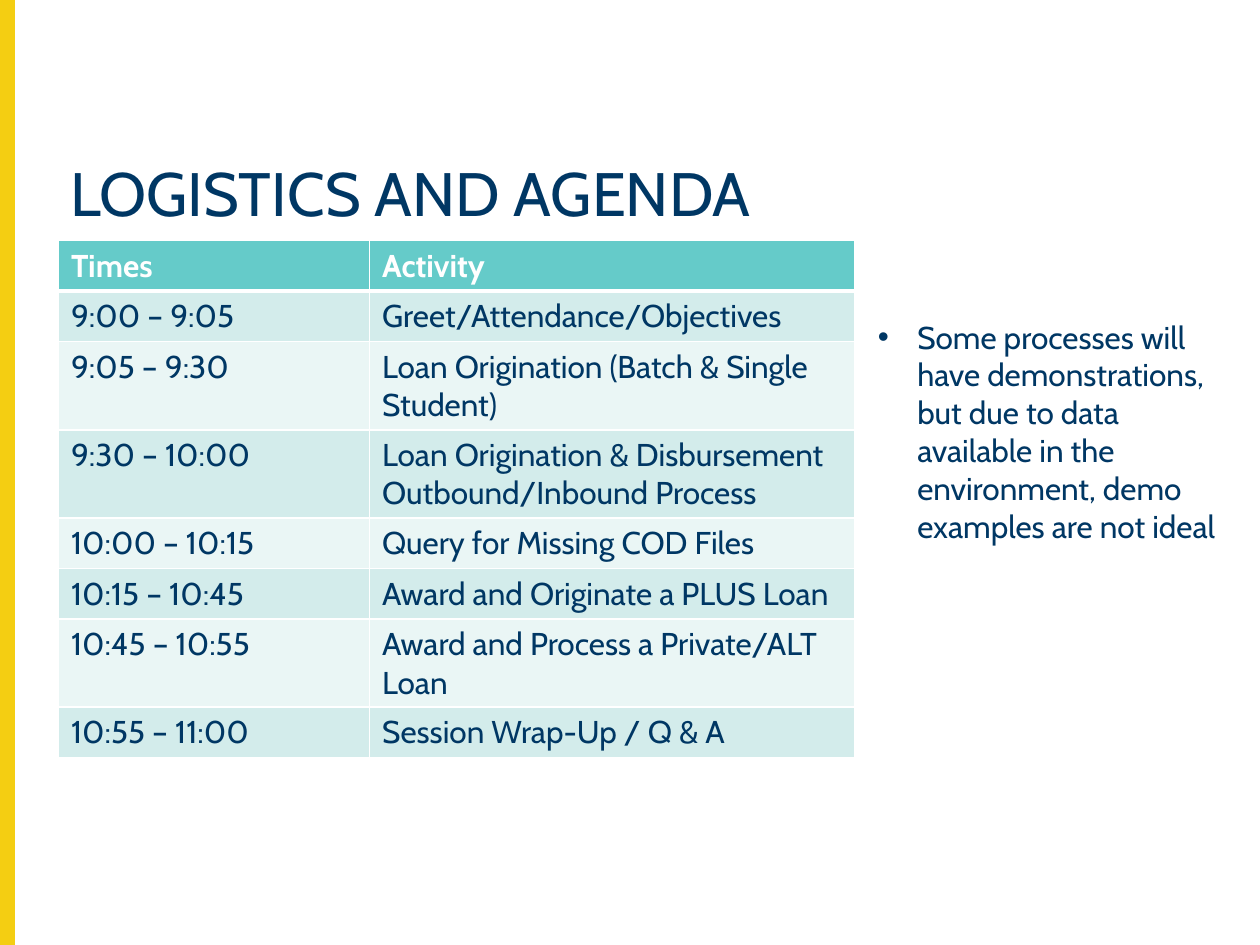
from lxml import etree
from pptx import Presentation
from pptx.dml.color import RGBColor
from pptx.enum.shapes import MSO_SHAPE
from pptx.enum.text import MSO_ANCHOR
from pptx.oxml.ns import qn
from pptx.util import Pt

RECTANGLE = MSO_SHAPE.RECTANGLE
TOP = MSO_ANCHOR.TOP

NAVY = RGBColor(0x00, 0x37, 0x64)
YELLOW = RGBColor(0xF4, 0xCE, 0x12)
TEAL = RGBColor(0x65, 0xCB, 0xC9)
BAND_DARK = RGBColor(0xD3, 0xEC, 0xEB)
BAND_LIGHT = RGBColor(0xEA, 0xF6, 0xF5)
WHITE = RGBColor(0xFF, 0xFF, 0xFF)

FONT = "Cabin"
BODY_SIZE = 18
ROW_HEIGHT = 26.64
COLUMN_WIDTHS = (177.84, 277.2)

AGENDA = [
    ("Times", "Activity"),
    ("9:00 – 9:05", "Greet/Attendance/Objectives"),
    ("9:05 – 9:30", "Loan Origination (Batch & Single Student)"),
    ("9:30 – 10:00", "Loan Origination & Disbursement Outbound/Inbound Process"),
    ("10:00 – 10:15", "Query for Missing COD Files"),
    ("10:15 – 10:45", "Award and Originate a PLUS Loan"),
    ("10:45 – 10:55", "Award and Process a Private/ALT Loan"),
    ("10:55 – 11:00", "Session Wrap-Up / Q & A"),
]
NOTE = ("Some processes will have demonstrations, but due to data available "
        "in the environment, demo examples are not ideal")


def style_paragraph(paragraph, size, color, bold=False):
    font = paragraph.font
    font.name, font.size, font.bold = FONT, Pt(size), bold
    font.color.rgb = color


def add_side_bar(slide, width, height):
    bar = slide.shapes.add_shape(RECTANGLE, 0, 0, width, height)
    bar.shadow.inherit = False
    bar.fill.solid()
    bar.fill.fore_color.rgb = YELLOW
    bar.line.color.rgb = YELLOW
    bar.line.width = Pt(1)


def add_text(slide, text, left, top, width, height, size):
    box = slide.shapes.add_textbox(Pt(left), Pt(top), Pt(width), Pt(height))
    frame = box.text_frame
    frame.word_wrap = True
    frame.vertical_anchor = TOP
    paragraph = frame.paragraphs[0]
    paragraph.text = text
    style_paragraph(paragraph, size, NAVY)
    return paragraph


def add_bullet(paragraph, indent):
    properties = paragraph._p.get_or_add_pPr()
    properties.set("marL", str(Pt(indent)))
    properties.set("indent", str(-Pt(indent)))
    etree.SubElement(properties, qn("a:buFont"), typeface="Arial")
    etree.SubElement(properties, qn("a:buChar"), char="•")


def set_borders(cell, bottom_width):
    properties = cell._tc.get_or_add_tcPr()
    widths = {"a:lnL": 1, "a:lnR": 1, "a:lnT": 1, "a:lnB": bottom_width}
    for position, (tag, width) in enumerate(widths.items()):
        line = etree.Element(qn(tag), w=str(Pt(width)))
        fill = etree.SubElement(line, qn("a:solidFill"))
        etree.SubElement(fill, qn("a:srgbClr"), val=str(WHITE))
        properties.insert(position, line)  # borders come before the fill


def style_cell(cell, text, row_index):
    header = row_index == 0
    band = BAND_DARK if row_index % 2 else BAND_LIGHT
    cell.text = text
    style_paragraph(cell.text_frame.paragraphs[0], BODY_SIZE,
                    WHITE if header else NAVY, header)
    cell.fill.solid()
    cell.fill.fore_color.rgb = TEAL if header else band
    set_borders(cell, 3 if header else 1)


def add_agenda_table(slide, left, top):
    table = slide.shapes.add_table(
        len(AGENDA), len(COLUMN_WIDTHS), Pt(left), Pt(top),
        Pt(sum(COLUMN_WIDTHS)), Pt(ROW_HEIGHT * len(AGENDA))).table
    for column, width in zip(table.columns, COLUMN_WIDTHS):
        column.width = Pt(width)
    for row_index, texts in enumerate(AGENDA):
        table.rows[row_index].height = Pt(ROW_HEIGHT)
        for column_index, text in enumerate(texts):
            style_cell(table.cell(row_index, column_index), text, row_index)


def main():
    presentation = Presentation()
    presentation.slide_width, presentation.slide_height = Pt(720), Pt(540)
    slide = presentation.slides.add_slide(presentation.slide_layouts[6])

    # Yellow bar on the left edge
    add_side_bar(slide, Pt(8), presentation.slide_height)

    # Title
    title = add_text(slide, "LOGISTICS AND AGENDA", 33, 90, 672, 57, 35)
    title.line_spacing = 0.9

    # Agenda and side note
    add_agenda_table(slide, 33.4, 137.5)
    note = add_text(slide, NOTE, 494.6, 178, 219, 138, BODY_SIZE)
    add_bullet(note, 22.5)

    presentation.save("out.pptx")


if __name__ == "__main__":
    main()
